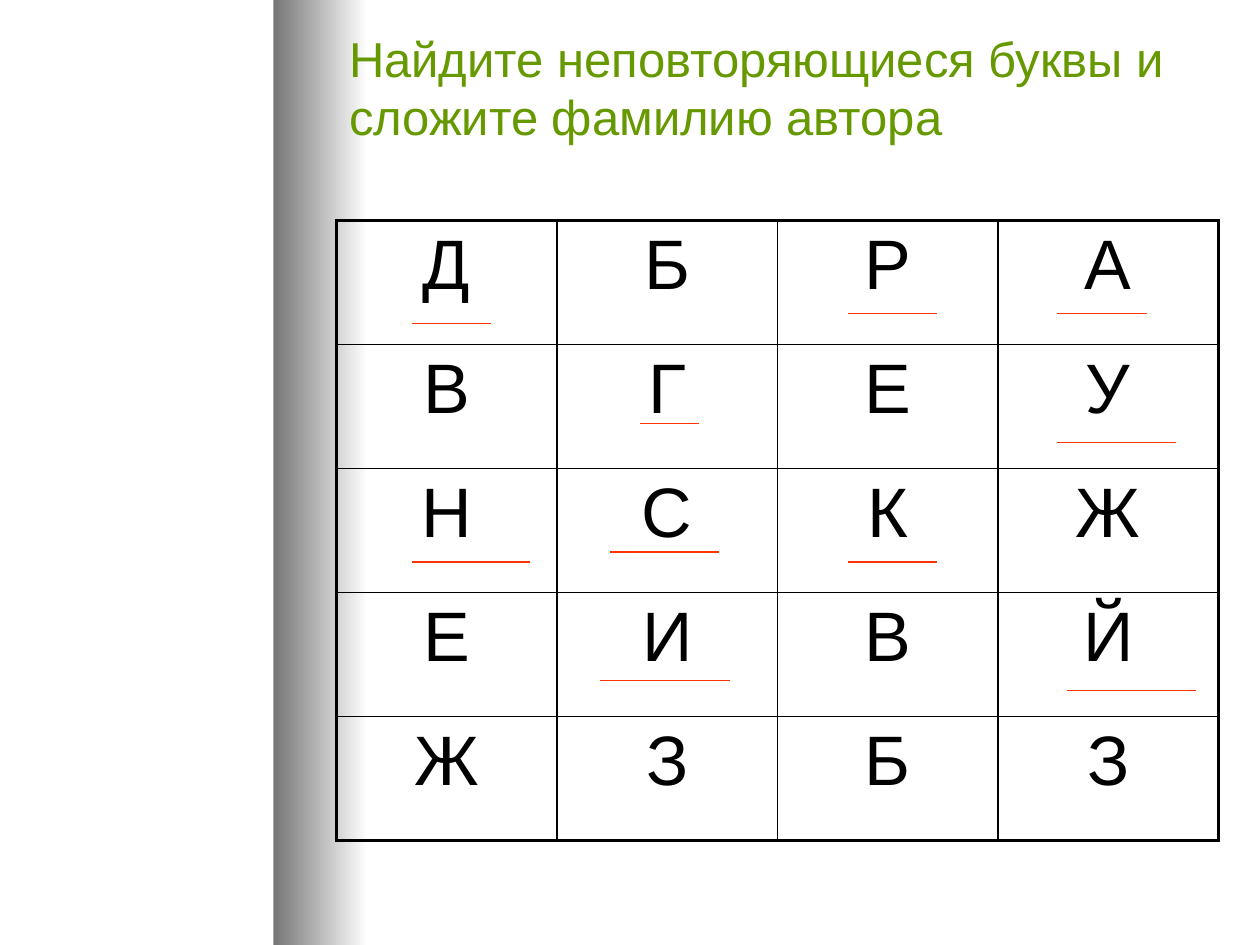
from lxml import etree
from pptx import Presentation
from pptx.dml.color import RGBColor
from pptx.enum.shapes import MSO_CONNECTOR, MSO_SHAPE
from pptx.enum.text import MSO_ANCHOR, MSO_AUTO_SIZE, PP_ALIGN
from pptx.oxml import parse_xml
from pptx.oxml.ns import nsdecls, qn
from pptx.util import Inches, Pt

ROWS = ["ДБРА", "ВГЕУ", "НСКЖ", "ЕИВЙ", "ЖЗБЗ"]
# Underlines: left and top from the table corner, then length
MARKS = [
    (0.6, 0.82, 0.63), (4.06, 0.74, 0.71), (5.72, 0.74, 0.71),
    (2.41, 1.61, 0.47), (5.72, 1.76, 0.94),
    (0.6, 2.71, 0.94), (2.17, 2.63, 0.87), (4.06, 2.71, 0.71),
    (2.09, 3.65, 1.03), (5.8, 3.73, 1.02),
]


def color(code):
    return RGBColor.from_string(code)


def style(item, **values):
    for name, value in values.items():
        setattr(item, name, value)


def add_band(slide, left, top, width, height):
    band = slide.shapes.add_shape(
        MSO_SHAPE.RECTANGLE, *map(Inches, (left, top, width, height)))
    band.shadow.inherit = False
    band.line.fill.background()
    band.fill.gradient()
    band.fill.gradient_angle = 0
    for stop, code in zip(band.fill.gradient_stops, ("767676", "FFFFFF")):
        stop.color.rgb = color(code)
    # Send the band behind the title
    slide.shapes._spTree.insert(2, band._element)


def add_title(slide, left, top, width, height):
    title = slide.shapes.title
    style(title, left=Inches(left), top=Inches(top),
          width=Inches(width), height=Inches(height))
    frame = title.text_frame
    frame.text = "Найдите неповторяющиеся буквы и сложите фамилию автора"
    style(frame, word_wrap=True, auto_size=MSO_AUTO_SIZE.NONE,
          vertical_anchor=MSO_ANCHOR.MIDDLE, margin_bottom=Inches(0.5))
    para = frame.paragraphs[0]
    para.alignment = PP_ALIGN.LEFT
    style(para.font, name="Arial", size=Pt(28))
    para.font.color.rgb = color("669900")


def add_edge(cell, side, width):
    cell._tc.get_or_add_tcPr().append(parse_xml(
        f'<a:ln{side} {nsdecls("a")} w="{Pt(width)}"><a:solidFill>'
        f'<a:srgbClr val="000000"/></a:solidFill></a:ln{side}>'))


def add_grid(slide, left, top, width, height):
    rows, cols = len(ROWS), len(ROWS[0])
    table = slide.shapes.add_table(
        rows, cols, *map(Inches, (left, top, width, height))).table
    style(table, first_row=False, horz_banding=False)
    for r, word in enumerate(ROWS):
        table.rows[r].height = Inches(height / rows)
        for c, letter in enumerate(word):
            cell = table.cell(r, c)
            cell.text = letter
            para = cell.text_frame.paragraphs[0]
            para.alignment = PP_ALIGN.CENTER
            style(para.font, name="Arial", size=Pt(40))
            para.font.color.rgb = color("000000")
            # Thick outer frame, thin inner lines
            outer = {"L": c == 0, "R": c == cols - 1,
                     "T": r == 0, "B": r == rows - 1}
            for side, thick in outer.items():
                add_edge(cell, side, 2.25 if thick else 1)
            cell.fill.background()


def add_marks(slide, left, top):
    for x, y, size in MARKS:
        start, level = left + x, top + y
        line = slide.shapes.add_connector(
            MSO_CONNECTOR.STRAIGHT,
            *map(Inches, (start, level, start + size, level)))
        line.line.color.rgb = color("FF3300")
        line.line.width = Pt(0.75)
        etree.SubElement(line._element.spPr, qn("a:effectLst"))


def main():
    deck = Presentation()
    style(deck, slide_width=Inches(10), slide_height=Inches(7.5))
    slide = deck.slides.add_slide(deck.slide_layouts[5])
    add_band(slide, 2.17, 0, 0.75, 7.5)
    add_title(slide, 2.67, 0.25, 7, 1.33)
    add_grid(slide, 2.67, 1.75, 7, 4.92)
    add_marks(slide, 2.67, 1.75)
    deck.save("out.pptx")


if __name__ == "__main__":
    main()
